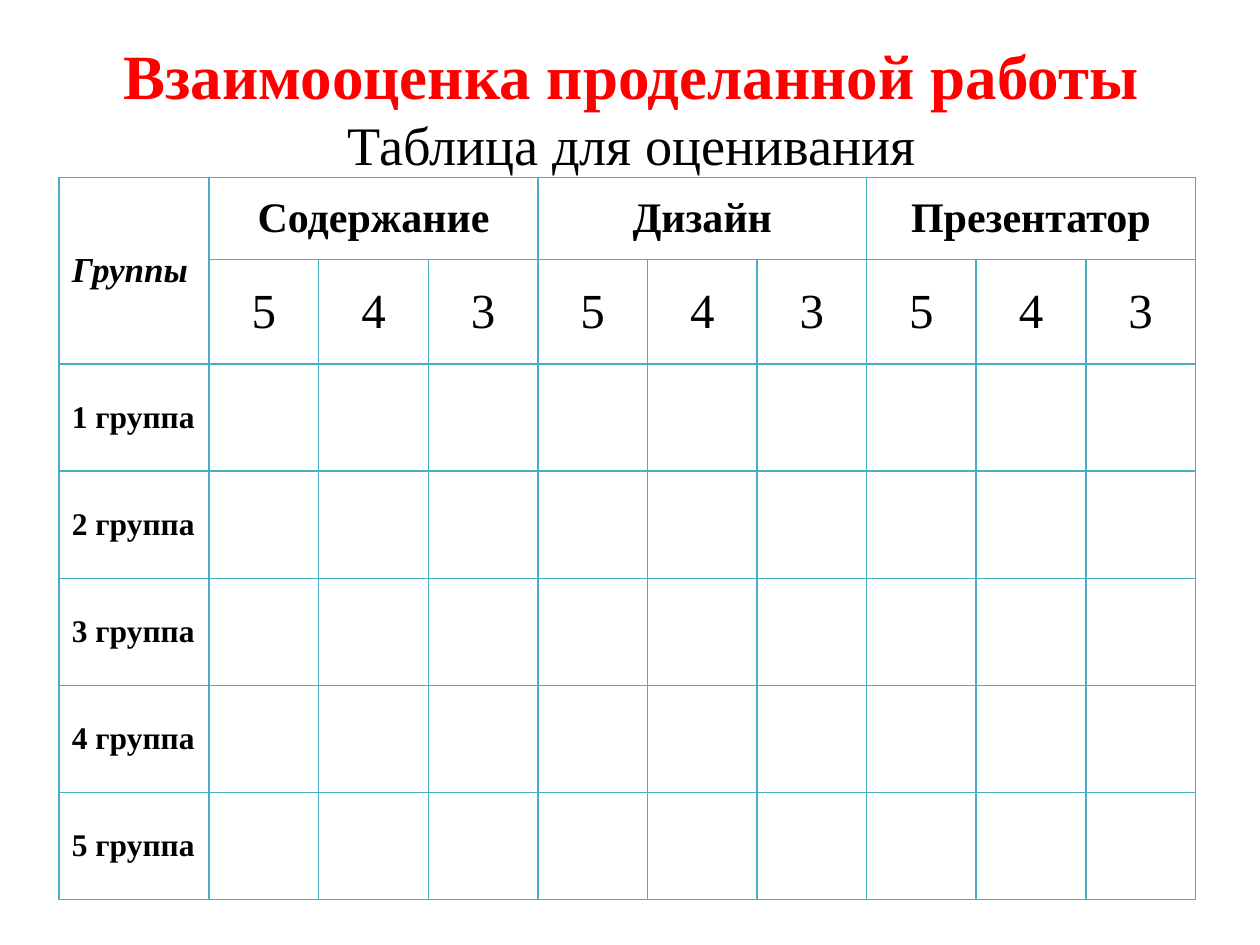
from dataclasses import dataclass
from lxml import etree
from pptx import Presentation
from pptx.dml.color import RGBColor
from pptx.enum.text import MSO_ANCHOR, PP_ALIGN
from pptx.oxml.ns import qn
from pptx.util import Inches, Pt

MIDDLE = MSO_ANCHOR.MIDDLE
LEFT, CENTER = PP_ALIGN.LEFT, PP_ALIGN.CENTER

COLORS = {"title": "FF0000", "text": "000000", "border": "4BACC6"}
FONT = "Times New Roman"

CRITERIA = ["Содержание", "Дизайн", "Презентатор"]
MARKS = ["5", "4", "3"]
GROUP_COUNT = 5
HEADER_ROWS = 2
COLUMN_WIDTHS = [1.19] + [0.87] * (len(CRITERIA) * len(MARKS))
ROW_HEIGHTS = [0.65, 0.83] + [0.85] * GROUP_COUNT


@dataclass
class TextStyle:
    size: int
    bold: bool = False
    italic: bool = False
    color: str = "text"
    align: PP_ALIGN = CENTER


@dataclass
class Entry:
    row: int
    column: int
    text: str
    style: TextStyle
    row_span: int = 1
    column_span: int = 1


TITLE = TextStyle(36, bold=True, color="title")
SUBTITLE = TextStyle(31)
CORNER = TextStyle(20, bold=True, italic=True, align=LEFT)
CRITERION = TextStyle(24, bold=True)
MARK = TextStyle(28)
GROUP = TextStyle(18, bold=True, align=LEFT)


def apply_font(font, style: TextStyle) -> None:
    font.name = FONT
    font.size = Pt(style.size)
    font.bold = style.bold
    font.italic = style.italic
    font.color.rgb = RGBColor.from_string(COLORS[style.color])


def add_title(slide, lines: list[tuple[str, TextStyle]]) -> None:
    box = slide.shapes.add_textbox(Inches(0.51), Inches(0.13), Inches(9), Inches(1.43))
    frame = box.text_frame
    frame.word_wrap = True
    frame.vertical_anchor = MIDDLE
    paragraph = frame.paragraphs[0]
    paragraph.alignment = CENTER
    for index, (text, style) in enumerate(lines):
        if index:
            paragraph.add_line_break()
        run = paragraph.add_run()
        run.text = text
        apply_font(run.font, style)


def add_borders(cell) -> None:
    properties = cell._tc.get_or_add_tcPr()
    for side in ("a:lnL", "a:lnR", "a:lnT", "a:lnB"):
        line = etree.SubElement(properties, qn(side), w=str(Pt(1)))
        fill = etree.SubElement(line, qn("a:solidFill"))
        etree.SubElement(fill, qn("a:srgbClr"), val=COLORS["border"])


def fill_entry(table, entry: Entry) -> None:
    cell = table.cell(entry.row, entry.column)
    if entry.row_span > 1 or entry.column_span > 1:
        cell.merge(table.cell(entry.row + entry.row_span - 1,
                              entry.column + entry.column_span - 1))
    cell.text = entry.text
    paragraph = cell.text_frame.paragraphs[0]
    paragraph.alignment = entry.style.align
    apply_font(paragraph.font, entry.style)


def table_entries() -> list[Entry]:
    entries = [Entry(0, 0, "Группы", CORNER, row_span=HEADER_ROWS)]
    for index, criterion in enumerate(CRITERIA):
        first = 1 + index * len(MARKS)
        entries.append(Entry(0, first, criterion, CRITERION, column_span=len(MARKS)))
        entries += [Entry(1, first + offset, mark, MARK)
                    for offset, mark in enumerate(MARKS)]
    entries += [Entry(HEADER_ROWS + index, 0, f"{index + 1} группа", GROUP)
                for index in range(GROUP_COUNT)]
    return entries


def add_score_table(slide) -> None:
    frame = slide.shapes.add_table(
        len(ROW_HEIGHTS), len(COLUMN_WIDTHS), Inches(0.47), Inches(1.41),
        Inches(sum(COLUMN_WIDTHS)), Inches(sum(ROW_HEIGHTS)))
    table = frame.table
    table.first_row = table.horz_banding = False
    for column, width in zip(table.columns, COLUMN_WIDTHS):
        column.width = Inches(width)
    for row, height in zip(table.rows, ROW_HEIGHTS):
        row.height = Inches(height)
    for cell in table.iter_cells():
        add_borders(cell)
        cell.fill.background()
        cell.vertical_anchor = MIDDLE
    for entry in table_entries():
        fill_entry(table, entry)


def main() -> None:
    presentation = Presentation()
    presentation.slide_width = Inches(10)
    presentation.slide_height = Inches(7.5)
    slide = presentation.slides.add_slide(presentation.slide_layouts[6])

    # Heading
    add_title(slide, [("Взаимооценка проделанной работы", TITLE),
                      ("Таблица для оценивания", SUBTITLE)])
    # Score table
    add_score_table(slide)

    presentation.save("out.pptx")


if __name__ == "__main__":
    main()
